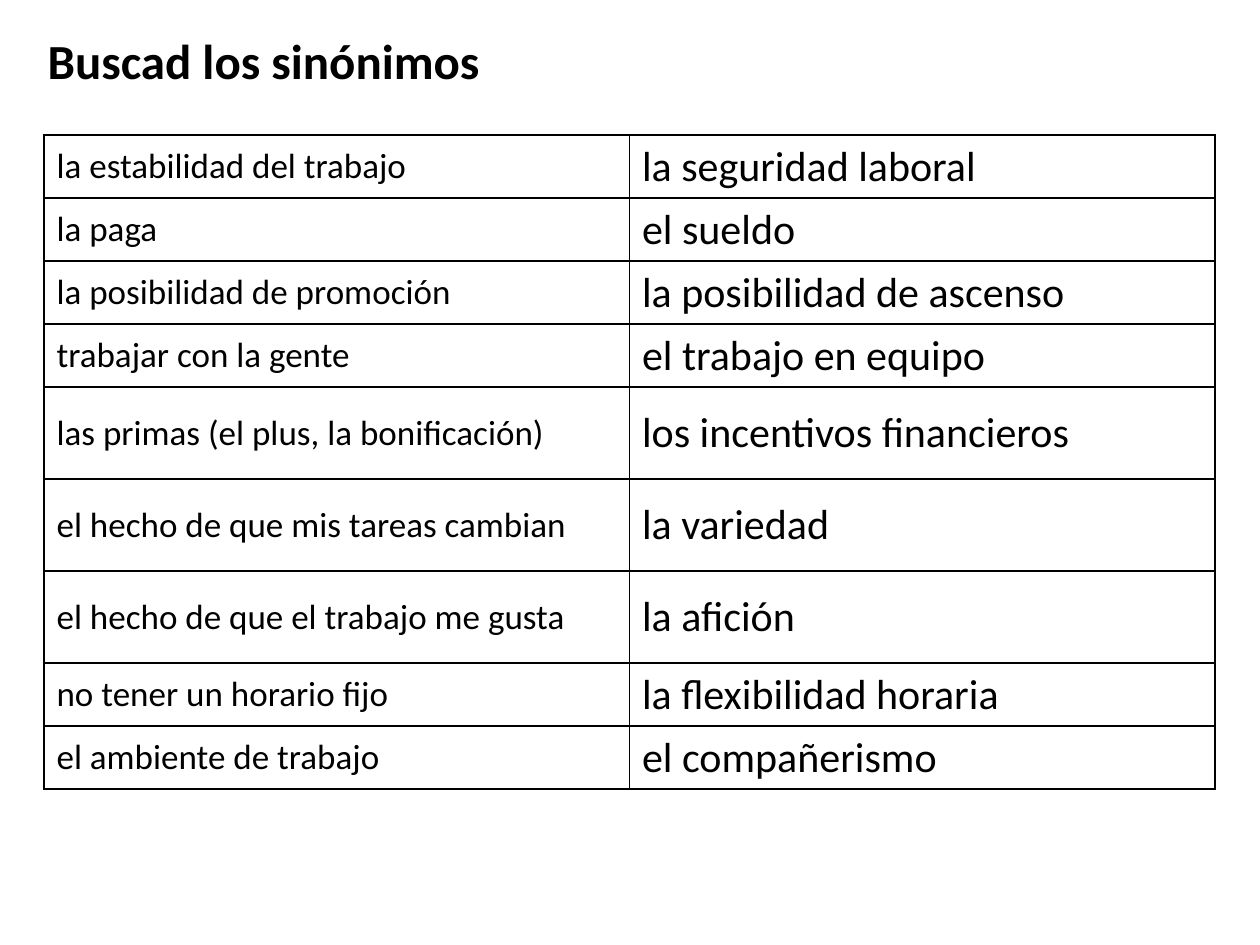
from dataclasses import dataclass

from lxml.etree import SubElement
from pptx import Presentation
from pptx.dml.color import RGBColor
from pptx.enum.text import MSO_ANCHOR as Anchor, MSO_AUTO_SIZE as AutoSize, PP_ALIGN as Align
from pptx.oxml.ns import qn
from pptx.util import Emu, Pt


@dataclass(frozen=True)
class Theme:
    font: str = "Calibri"
    ink: str = "000000"
    title_size: int = 28
    column_sizes: tuple = (20, 24)
    border: int = 1


SYNONYMS = [
    ("la estabilidad del trabajo", "la seguridad laboral"),
    ("la paga", "el sueldo"),
    ("la posibilidad de promoción", "la posibilidad de ascenso"),
    ("trabajar con la gente", "el trabajo en equipo"),
    ("las primas (el plus, la bonificación)", "los incentivos financieros"),
    ("el hecho de que mis tareas cambian", "la variedad"),
    ("el hecho de que el trabajo me gusta", "la afición"),
    ("no tener un horario fijo", "la flexibilidad horaria"),
    ("el ambiente de trabajo", "el compañerismo"),
]
ROW, TALL_ROW = 63, 92
ROW_HEIGHTS = [ROW] * 4 + [TALL_ROW] * 3 + [ROW] * 2


def px(n):
    return Emu(round(n * 914400 / 126))


class Deck:
    """Holds the theme and the current slide, and adds styled elements to it."""

    def __init__(self, theme, width, height):
        self.theme = theme
        self.prs = Presentation()
        self.prs.slide_width, self.prs.slide_height = px(width), px(height)
        self.s = self.prs.slides.add_slide(self.prs.slide_layouts[5])

    def add_text(self, tf, text, size, bold=False):
        p = tf.paragraphs[0]
        p.alignment = Align.LEFT
        r = p.add_run()
        r.text = text
        r.font.name, r.font.size, r.font.bold = self.theme.font, Pt(size), bold
        r.font.color.rgb = RGBColor.from_string(self.theme.ink)

    def title(self, text, x, y, w, h):
        sp = self.s.shapes.title
        sp.left, sp.top, sp.width, sp.height = map(px, (x, y, w, h))
        tf = sp.text_frame
        tf.word_wrap, tf.auto_size = True, AutoSize.SHAPE_TO_FIT_TEXT
        tf.vertical_anchor = Anchor.TOP
        self.add_text(tf, text, self.theme.title_size, bold=True)

    def borders(self, cell):
        tc_pr = cell._tc.get_or_add_tcPr()
        for i, side in enumerate(("a:lnL", "a:lnR", "a:lnT", "a:lnB")):
            ln = tc_pr.makeelement(qn(side), w=str(Pt(self.theme.border)))
            fill = SubElement(ln, qn("a:solidFill"))
            SubElement(fill, qn("a:srgbClr"), val=self.theme.ink)
            tc_pr.insert(i, ln)

    def table(self, rows, heights, x, y, w):
        shape = self.s.shapes.add_table(
            len(rows), len(rows[0]), px(x), px(y), px(w), px(sum(heights)))
        table = shape.table
        table.first_row = table.horz_banding = False
        for row, height, texts in zip(table.rows, heights, rows):
            row.height = px(height)
            for cell, text, size in zip(row.cells, texts, self.theme.column_sizes):
                cell.fill.background()
                cell.vertical_anchor = Anchor.MIDDLE
                self.add_text(cell.text_frame, text, size)
                self.borders(cell)


def main():
    deck = Deck(Theme(), 1260, 945)
    deck.title("Buscad los sinónimos", 35, 24, 1101, 72)
    deck.table(SYNONYMS, ROW_HEIGHTS, 44, 135, 1171)
    deck.prs.save("out.pptx")


if __name__ == "__main__":
    main()
